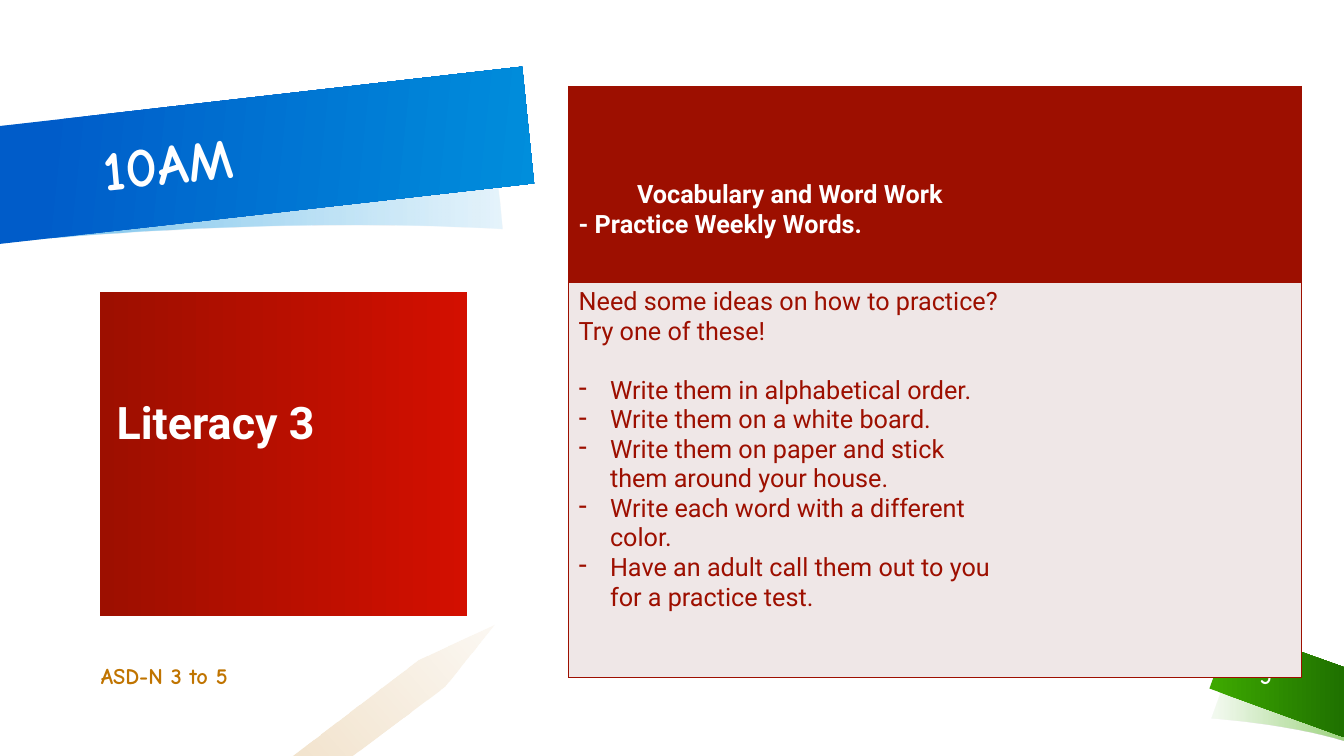
from dataclasses import dataclass

from lxml.etree import SubElement
from pptx import Presentation
from pptx.dml.color import RGBColor
from pptx.enum.shapes import MSO_SHAPE as Preset
from pptx.enum.text import MSO_ANCHOR as Anchor, PP_ALIGN as Align
from pptx.oxml.ns import qn
from pptx.util import Cm, Pt


@dataclass(frozen=True)
class Theme:
    display: str = "Comic Neue"
    body: str = "Roboto"
    white: str = "FFFFFF"
    amber: str = "C07400"
    dark_red: str = "9D0F00"
    red: str = "D30F00"
    pale_red: str = "EFE7E7"
    green: str = "3DA800"
    dark_green: str = "1F7100"
    blue: str = "008EDC"
    dark_blue: str = "005CC9"
    title_size: int = 40
    subject_size: int = 32
    table_size: int = 18
    footer_size: int = 16


THEME = Theme()


# Fills and outlines
def fill_gradient(shape, angle, *stops):
    """Each stop is (position %, colour, opacity %)."""
    shape.fill.gradient()
    shape.line.fill.background()
    shape.shadow.inherit = False
    gradient = shape._element.spPr.find(qn("a:gradFill"))
    for child in list(gradient):
        gradient.remove(child)
    stop_list = SubElement(gradient, qn("a:gsLst"))
    for position, color, opacity in stops:
        stop = SubElement(stop_list, qn("a:gs"), pos=str(position * 1000))
        value = SubElement(stop, qn("a:srgbClr"), val=color)
        if opacity < 100:
            SubElement(value, qn("a:alpha"), val=str(opacity * 1000))
    SubElement(gradient, qn("a:lin"), ang=str(angle * 60000), scaled="0")


def curve(start, control_1, control_2, end, steps=16):
    """Points along a cubic curve, both ends included."""
    points = []
    for step in range(steps + 1):
        t = step / steps
        weights = ((1 - t) ** 3, 3 * t * (1 - t) ** 2, 3 * t * t * (1 - t), t ** 3)
        corners = (start, control_1, control_2, end)
        points.append(tuple(sum(w * c[axis] for w, c in zip(weights, corners))
                            for axis in (0, 1)))
    return points


def add_outline(page, points, angle, *stops):
    corners = [(Cm(x), Cm(y)) for x, y in points]
    builder = page.shapes.build_freeform(*corners[0])
    builder.add_line_segments(corners[1:], close=True)
    fill_gradient(builder.convert_to_shape(), angle, *stops)


# Text
def style(para, font, size, color, bold=True):
    for span in para.runs:
        span.font.name = font
        span.font.size = Pt(size)
        span.font.bold = bold
        span.font.color.rgb = RGBColor.from_string(color)


def set_margins(frame, left, top, right, bottom):
    frame.margin_left, frame.margin_top = Cm(left), Cm(top)
    frame.margin_right, frame.margin_bottom = Cm(right), Cm(bottom)


def add_label(page, text, place, size, color, align=Align.LEFT, left_margin=0.25):
    box = page.shapes.add_textbox(*map(Cm, place))
    frame = box.text_frame
    frame.word_wrap = True
    frame.vertical_anchor = Anchor.MIDDLE
    set_margins(frame, left_margin, 0.13, 0.25, 0.13)
    para = frame.paragraphs[0]
    para.text = text
    para.alignment = align
    style(para, THEME.display, size, color)
    return box


def add_bullet(para, mark):
    indent = Cm(0.79)
    properties = para._p.get_or_add_pPr()
    properties.set("marL", str(indent))
    properties.set("indent", str(-indent))
    SubElement(properties, qn("a:buChar"), char=mark)


# Table
def style_cell(cell, fill, edges):
    properties = cell._tc.get_or_add_tcPr()
    for edge in "LRTB":
        line = SubElement(properties, qn(f"a:ln{edge}"), w=str(Pt(1)))
        if edge in edges:
            paint = SubElement(line, qn("a:solidFill"))
            SubElement(paint, qn("a:srgbClr"), val=THEME.dark_red)
        else:
            SubElement(line, qn("a:noFill"))
    cell.fill.solid()
    cell.fill.fore_color.rgb = RGBColor.from_string(fill)


def write_cell(cell, lines, color, bold):
    frame = cell.text_frame
    frame.text = "\n".join(lines)
    for para in frame.paragraphs:
        style(para, THEME.body, THEME.table_size, color, bold)
    return frame.paragraphs


def add_practice_table(page):
    frame = page.shapes.add_table(2, 2, Cm(14.33), Cm(2.18), Cm(18.47), Cm(14.89))
    table = frame.table
    table.first_row = table.horz_banding = False
    for column, width in zip(table.columns, (11.15, 7.32)):
        column.width = Cm(width)
    for row, height in zip(table.rows, (4.93, 9.96)):
        row.height = Cm(height)
    for row, fill in enumerate((THEME.dark_red, THEME.pale_red)):
        for column, edges in enumerate(("LTB", "RTB")):
            style_cell(table.cell(row, column), fill, edges)

    header = table.cell(0, 0)
    header.margin_top = Cm(2.36)
    heading = write_cell(header, ["Vocabulary and Word Work", "- Practice Weekly Words."],
                         THEME.white, True)[0]
    heading.alignment = Align.CENTER

    ideas = [
        "Write them in alphabetical order.",
        "Write them on a white board.",
        "Write them on paper and stick them around your house.",
        "Write each word with a different color.",
        "Have an adult call them out to you for a practice test.",
    ]
    intro = "Need some ideas on how to practice? Try one of these!"
    paras = write_cell(table.cell(1, 0), [intro, *ideas], THEME.dark_red, False)
    paras[0].space_after = Pt(21)
    for para in paras[1:]:
        add_bullet(para, "-")


# Slide parts
def add_decoration(page):
    # Green page-number ribbon
    shade = (curve((30.53, 18.11), (30.53, 18.11), (32.46, 18.24), (33.86, 18.67))
             + curve((33.86, 16.97), (32.31, 16.54), (31.09, 16.56), (31.09, 16.56)))
    add_outline(page, shade, 0, (3, THEME.green, 6), (100, THEME.green, 50))
    add_outline(page, [(33.86, 16.81), (31.04, 15.8), (30.48, 17.35), (33.86, 18.57)],
                0, (3, THEME.green, 100), (100, THEME.dark_green, 100))
    # Blue title ribbon
    shade = (curve((12.37, 2.87), (12.37, 2.87), (7.95, 2.39), (-0.05, 3.18))
             + curve((-0.05, 6.12), (7.26, 5.38), (12.67, 5.77), (12.67, 5.77)))
    add_outline(page, shade, 180, (0, THEME.blue, 10), (88, THEME.blue, 50))
    add_outline(page, [(-0.03, 6.15), (13.46, 4.62), (13.16, 1.68), (-0.03, 3.18)],
                6, (9, THEME.dark_blue, 100), (100, THEME.blue, 100))
    # Pencil
    add_outline(page, [(12.45, 15.75), (10.54, 16.64), (7.37, 19.05), (8.89, 19.05),
                       (11.2, 17.32)],
                139, (0, THEME.amber, 5), (100, THEME.amber, 20))


def add_subject(page, text):
    card = page.shapes.add_shape(Preset.RECTANGLE, Cm(2.53), Cm(7.37), Cm(9.25), Cm(8.15))
    fill_gradient(card, 180, (0, THEME.red, 100), (100, THEME.dark_red, 100))
    frame = card.text_frame
    frame.word_wrap = True
    frame.vertical_anchor = Anchor.MIDDLE
    set_margins(frame, 0.41, 0.51, 0.3, 2)
    para = frame.paragraphs[0]
    para.text = text
    para.alignment = Align.LEFT
    para.line_spacing = 0.9
    style(para, THEME.body, THEME.subject_size, THEME.white)


def main():
    deck = Presentation()
    deck.slide_width, deck.slide_height = Cm(33.87), Cm(19.05)
    page = deck.slides.add_slide(deck.slide_layouts[6])
    add_decoration(page)
    title = add_label(page, "10AM", (2.34, 2.34, 11, 2.95), THEME.title_size, THEME.white)
    title.rotation = -6
    title.text_frame.paragraphs[0].line_spacing = 0.9
    add_subject(page, "Literacy 3")
    add_label(page, "ASD-N 3 to 5", (2.54, 16.51, 7.34, 1.02), THEME.footer_size,
              THEME.amber, left_margin=0)
    add_label(page, "5", (31.01, 16.51, 1.78, 1.02), THEME.footer_size, THEME.white,
              Align.CENTER)
    add_practice_table(page)
    deck.save("out.pptx")


if __name__ == "__main__":
    main()
